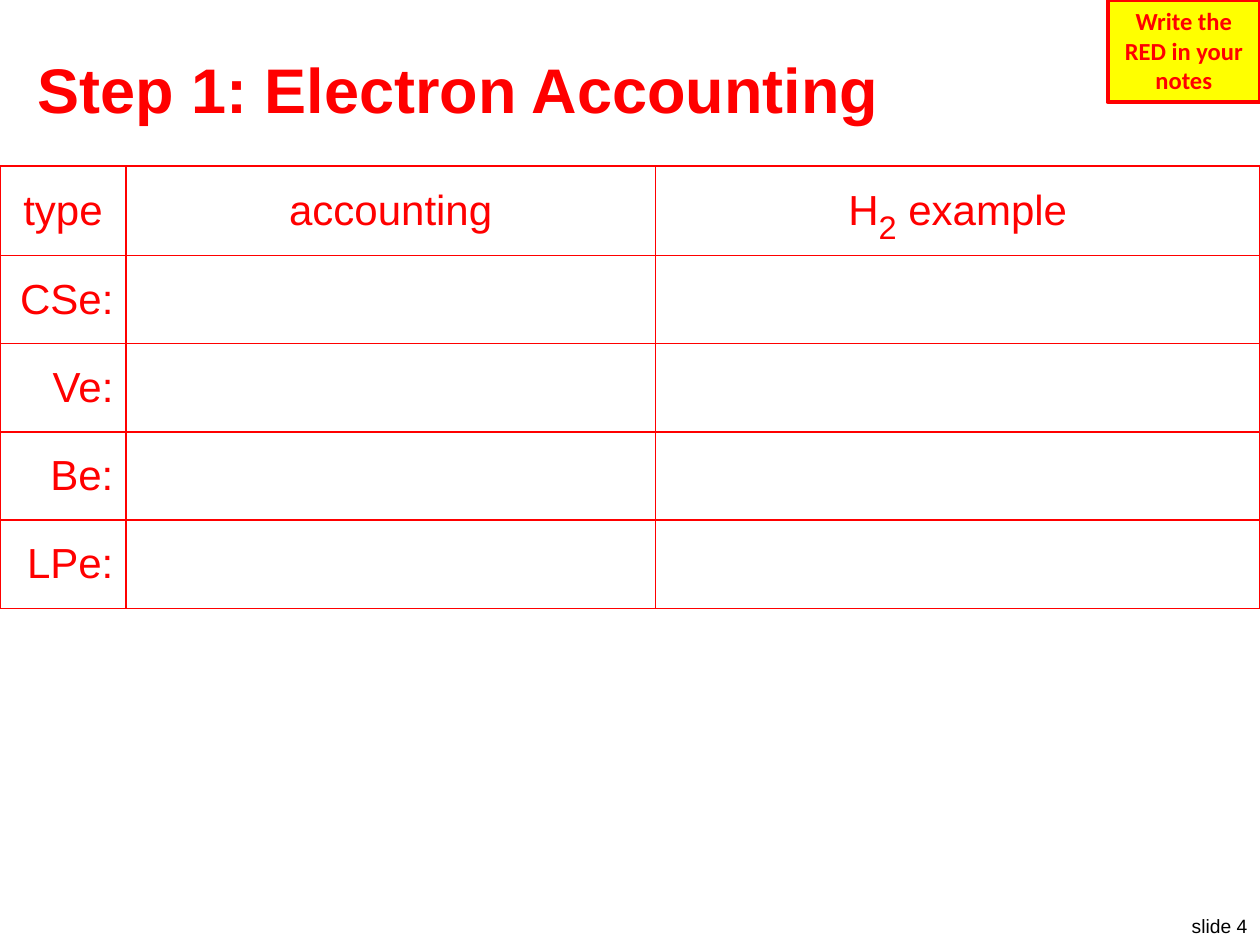
from dataclasses import dataclass

from lxml import etree
from pptx import Presentation
from pptx import util as u
from pptx.dml.color import RGBColor
from pptx.enum import shapes, text
from pptx.oxml import ns


@dataclass(frozen=True)
class Theme:
    red: str = "FF0000"
    yellow: str = "FFFF00"
    white: str = "FFFFFF"
    black: str = "000000"
    body_font: str = "Arial"
    note_font: str = "Calibri"
    title_size: float = 36
    table_size: float = 24
    subscript_size: float = 32
    note_size: float = 14
    footer_size: float = 11
    border: float = 1
    note_line: float = 2.25


LEFT, CENTER, RIGHT = text.PP_ALIGN.LEFT, text.PP_ALIGN.CENTER, text.PP_ALIGN.RIGHT


class Deck:
    def __init__(self, theme, width, height):
        self.theme = theme
        self.prs = Presentation()
        self.prs.slide_width, self.prs.slide_height = u.Cm(width), u.Cm(height)
        self.s = self.prs.slides.add_slide(self.prs.slide_layouts[6])

    def format_runs(self, p, size, color, align, bold=False, font=None):
        p.alignment = align
        for r in p.runs:
            r.font.size = u.Pt(size)
            r.font.name = font or self.theme.body_font
            r.font.bold = bold
            r.font.color.rgb = RGBColor.from_string(color)

    def text_box(self, label, box, size, color, align=LEFT, bold=False, wrap=True,
                 anchor=text.MSO_ANCHOR.TOP):
        tf = self.s.shapes.add_textbox(*map(u.Cm, box)).text_frame
        tf.word_wrap = wrap
        tf.vertical_anchor = anchor
        tf.text = label
        self.format_runs(tf.paragraphs[0], size, color, align, bold)

    def note(self, label, box):
        t = self.theme
        sp = self.s.shapes.add_shape(shapes.MSO_SHAPE.RECTANGLE, *map(u.Cm, box))
        sp.shadow.inherit = False
        sp.fill.solid()
        sp.fill.fore_color.rgb = RGBColor.from_string(t.yellow)
        sp.line.color.rgb = RGBColor.from_string(t.red)
        sp.line.width = u.Pt(t.note_line)
        tf = sp.text_frame
        tf.word_wrap = True
        tf.auto_size = text.MSO_AUTO_SIZE.SHAPE_TO_FIT_TEXT
        tf.vertical_anchor = text.MSO_ANCHOR.TOP
        tf.text = label
        self.format_runs(tf.paragraphs[0], t.note_size, t.red, CENTER, True, t.note_font)

    def cell_borders(self, cell):
        tc_pr = cell._tc.get_or_add_tcPr()
        for side in ("lnL", "lnR", "lnT", "lnB"):
            ln = etree.SubElement(tc_pr, ns.qn(f"a:{side}"), w=str(u.Pt(self.theme.border)))
            fill = etree.SubElement(ln, ns.qn("a:solidFill"))
            etree.SubElement(fill, ns.qn("a:srgbClr"), val=self.theme.red)

    def table(self, rows, top, widths, row_height):
        box = (0, top, sum(widths), row_height * len(rows))
        table = self.s.shapes.add_table(len(rows), len(widths), *map(u.Cm, box)).table
        for column, width in zip(table.columns, widths):
            column.width = u.Cm(width)
        for i, row in enumerate(rows):
            table.rows[i].height = u.Cm(row_height)
            for j, label in enumerate(row):
                cell = table.cell(i, j)
                self.cell_borders(cell)
                cell.fill.solid()
                cell.fill.fore_color.rgb = RGBColor.from_string(self.theme.white)
                cell.vertical_anchor = text.MSO_ANCHOR.MIDDLE
                if label:
                    self.cell_text(cell, label, CENTER if i == 0 else RIGHT)

    def cell_text(self, cell, label, align):
        t = self.theme
        p = cell.text_frame.paragraphs[0]
        parts = label.split("_")
        p.text = parts[0]
        for part in parts[1:]:
            p.add_run().text = part
        self.format_runs(p, t.table_size, t.red, align)
        for r in p.runs[1::2]:
            r.font.size = u.Pt(t.subscript_size)
            r.font._element.set("baseline", "-25000")


def main():
    theme = Theme()
    deck = Deck(theme, 25.4, 19.05)
    deck.text_box("slide 4", (23.5, 18.31, 1.9, 0.74), theme.footer_size, theme.black,
                  RIGHT, wrap=False)
    deck.text_box("Step 1: Electron Accounting", (0.51, 0.76, 24.38, 2.03),
                  theme.title_size, theme.red, bold=True, anchor=text.MSO_ANCHOR.MIDDLE)
    header = ("type", "accounting", "H_2_ example")
    electrons = ("CSe:", "Ve:", "Be:", "LPe:")
    rows = [header] + [(name, "", "") for name in electrons]
    deck.table(rows, 3.35, (2.54, 10.67, 12.19), 1.78)
    deck.note("Write the RED in your notes", (22.33, 0, 3.07, 2.06))
    deck.prs.save("out.pptx")


if __name__ == "__main__":
    main()
